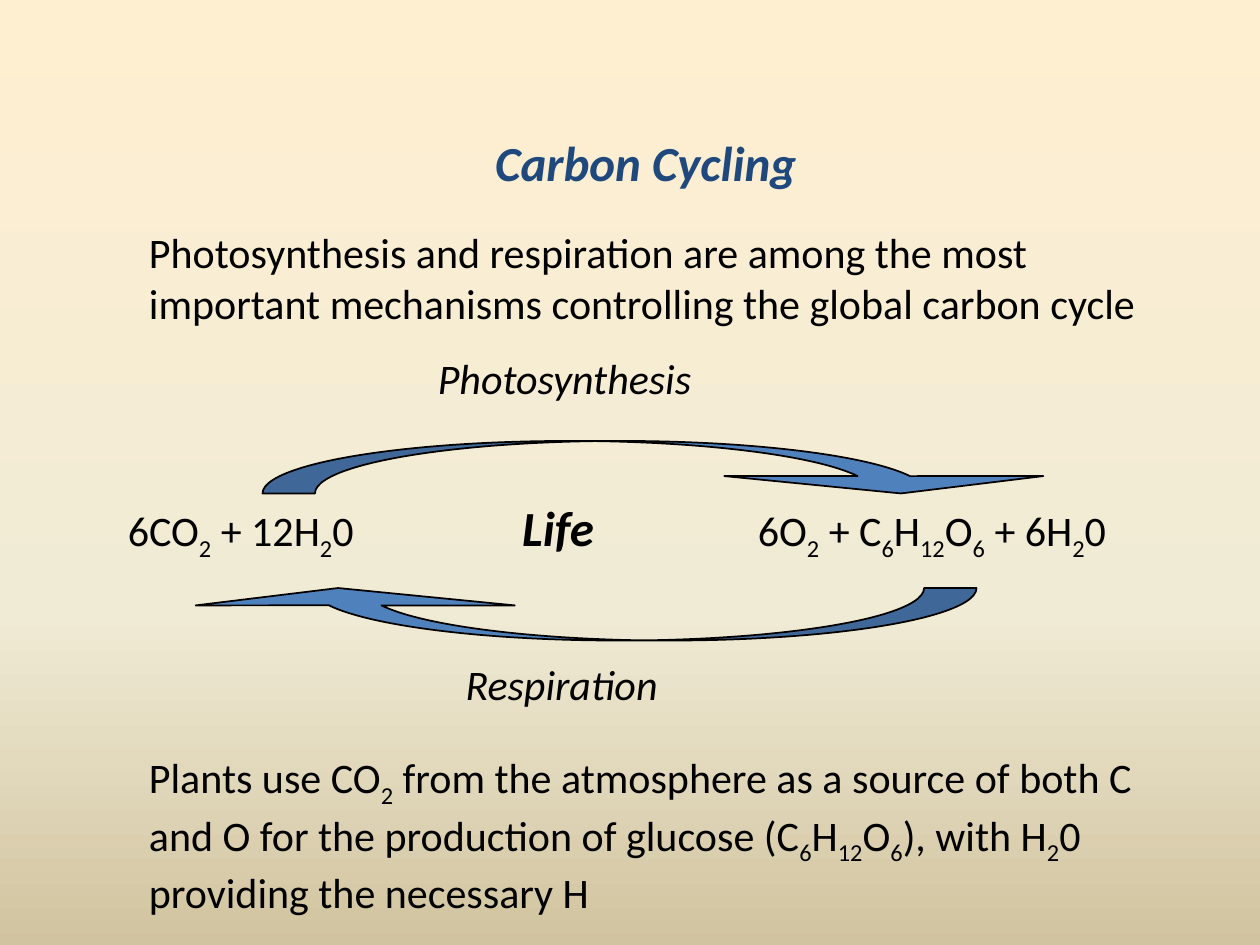
from typing import NamedTuple

from lxml.etree import SubElement
from pptx import Presentation
from pptx.dml.color import RGBColor as RGB
from pptx.enum.shapes import MSO_SHAPE as Kind
from pptx.enum.text import MSO_ANCHOR as Anchor, PP_ALIGN as Align
from pptx.oxml import parse_xml
from pptx.oxml.ns import nsdecls, qn
from pptx.util import Inches, Pt

BLACK = RGB(0, 0, 0)
NAVY = RGB(0x1F, 0x49, 0x7D)
BLUE = RGB(0x4F, 0x81, 0xBD)
CREAM = RGB(0xFF, 0xEF, 0xD1)
SAND = RGB(0xF0, 0xEB, 0xD5)
TAN = RGB(0xD1, 0xC3, 0x9F)
FONT = "Calibri"
UNIT = Inches(1) // 12


class Box(NamedTuple):
    col: int
    row: int
    wide: int
    high: int

    def area(self) -> tuple:
        return tuple(UNIT * n for n in self)


class Note(NamedTuple):
    box: Box
    text: str


class Arrow(NamedTuple):
    box: Box
    turn: int


TITLE = Box(16, 12, 91, 7)
CYCLE = Box(11, 33, 103, 36)
NOTES = [
    Note(Box(13, 21, 98, 11),
         "Photosynthesis and respiration are among the most important "
         "mechanisms controlling the global carbon cycle"),
    Note(Box(13, 71, 99, 16),
         "Plants use CO_2_ from the atmosphere as a source of both C and O "
         "for the production of glucose (C_6_H_12_O_6_), with H_2_0 "
         "providing the necessary H"),
]
ARROWS = [Arrow(Box(25, 42, 76, 5), 0), Arrow(Box(17, 56, 76, 5), 180)]


def paint(slide) -> None:
    fill = slide.background.fill
    fill.gradient()
    fill.gradient_angle = 270
    stops = slide.background._cSld.find(".//" + qn("a:gsLst"))
    for stop in list(stops):
        stops.remove(stop)
    for pos, tint in ((0, CREAM), (65, SAND), (100, TAN)):
        stops.append(parse_xml(
            f'<a:gs {nsdecls("a")} pos="{pos * 1000}">'
            f'<a:srgbClr val="{tint}"/></a:gs>'))


def style(run, size: int = 24, bold: bool = False, slant: bool = False,
          tint: RGB = BLACK) -> None:
    font = run.font
    font.name, font.size = FONT, Pt(size)
    font.bold, font.italic = bold, slant
    font.color.rgb = tint


def write(par, text: str, **look) -> None:
    for i, part in enumerate(text.split("_")):
        if part:
            run = par.add_run()
            run.text = part
            style(run, **look)
            if i % 2:
                run.font._element.set("baseline", "-25000")


def set_tabs(par, *stops: float) -> None:
    tabs = SubElement(par._p.get_or_add_pPr(), qn("a:tabLst"))
    for stop in stops:
        SubElement(tabs, qn("a:tab"), pos=str(Inches(stop)), algn="l")


def add_box(slide, box: Box):
    frame = slide.shapes.add_textbox(*box.area()).text_frame
    frame.word_wrap = True
    return frame


def add_title(slide) -> None:
    title = slide.shapes.title
    title.left, title.top, title.width, title.height = TITLE.area()
    frame = title.text_frame
    frame.text = "Carbon Cycling"
    frame.vertical_anchor = Anchor.TOP
    par = frame.paragraphs[0]
    par.alignment = Align.CENTER
    style(par.runs[0], 28, True, True, NAVY)


def add_cycle(slide) -> None:
    frame = add_box(slide, CYCLE)
    top, mid, low = (frame.paragraphs[0], frame.add_paragraph(),
                     frame.add_paragraph())
    mid.space_before, low.space_before = Pt(54), Pt(55)
    set_tabs(top, 2.46)
    set_tabs(mid, 3.13, 5)
    set_tabs(low, 2.68)
    write(top, "\tPhotosynthesis", slant=True)
    write(mid, "6CO_2_ + 12H_2_0\t")
    write(mid, "Life", size=28, bold=True, slant=True)
    write(mid, "\t6O_2_ + C_6_H_12_O_6_ + 6H_2_0")
    write(low, "\tRespiration", slant=True)


def add_arrow(slide, arrow: Arrow) -> None:
    shape = slide.shapes.add_shape(Kind.CURVED_DOWN_ARROW, *arrow.box.area())
    shape.rotation = arrow.turn
    for i, value in enumerate((3.04, 6.08, 0.33)):
        shape.adjustments[i] = value
    shape.shadow.inherit = False
    shape.fill.solid()
    shape.fill.fore_color.rgb = BLUE
    shape.line.color.rgb = BLACK
    shape.line.width = Pt(1)


def main() -> None:
    deck = Presentation()
    deck.slide_width, deck.slide_height = UNIT * 120, UNIT * 90
    slide = deck.slides.add_slide(deck.slide_layouts[5])
    paint(slide)
    add_title(slide)
    add_cycle(slide)
    for arrow in ARROWS:
        add_arrow(slide, arrow)
    for note in NOTES:
        write(add_box(slide, note.box).paragraphs[0], note.text)
    deck.save("out.pptx")


if __name__ == "__main__":
    main()
